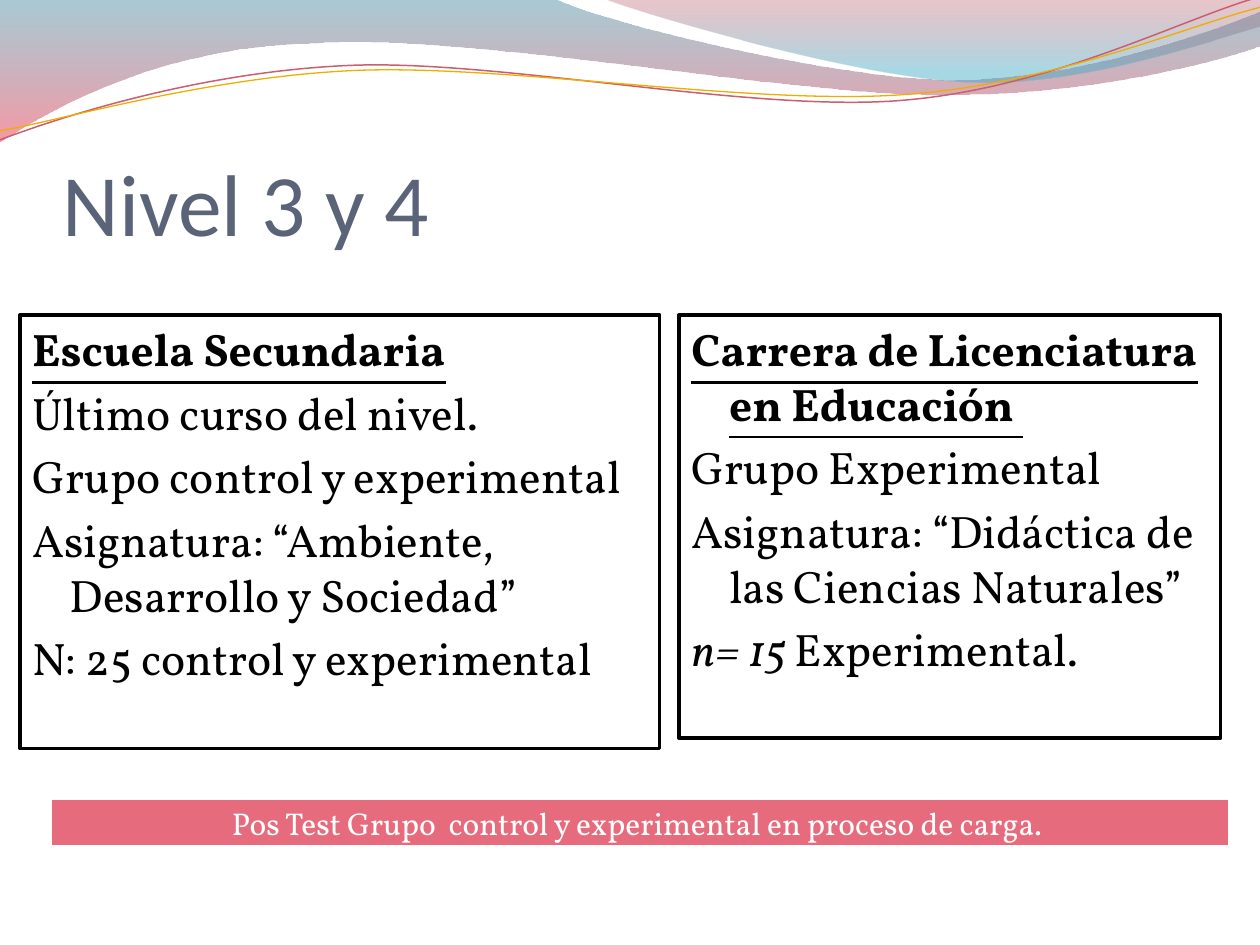
from math import cos, radians, sin

from lxml.etree import SubElement
from pptx import Presentation
from pptx.dml.color import RGBColor
from pptx.enum.shapes import MSO_SHAPE
from pptx.enum.text import MSO_ANCHOR, MSO_AUTO_SIZE, PP_ALIGN
from pptx.oxml.ns import qn
from pptx.util import Cm, Pt

COLORS = {
    "white": "FFFFFF", "black": "000000", "title": "5A6378", "banner": "E66C7D",
    "teal": "3F8A9F", "pink": "EF445B", "brick": "B84253", "cyan": "42ABC7",
    "rose": "CB5F6E", "gold": "F0AD00",
}
BODY_FONT = "Vollkorn"
LINE_TILT = 2.7  # degrees, counter-clockwise

# Outlines in centimetres: a pair is a straight step, six numbers a Bézier curve
LEFT_WAVE = [
    (0, 0), (11.18, -0.03), (12.09, 0.43, 16.87, 1.6, 19.25, 1.6),
    (21.67, 1.6, 24.33, 0.66, 25.4, 0.23), (25.43, 0.91),
    (24.97, 1.12, 22.1, 1.93, 18.95, 1.91), (15.8, 1.91, 9.7, 0.71, 6.53, 0.86),
    (3.28, 0.91, 1.17, 2.11, -0.03, 2.87), (0, 0),
]
RIGHT_WAVE = [
    (12.17, -0.03), (12.93, 0.28, 17.32, 1.57, 19.53, 1.65),
    (21.74, 1.75, 24.41, 0.81, 25.4, 0.53), (25.4, 0), (12.17, -0.03),
]
ROSE_LINE = [
    (0, 2.82), (1.22, 2.36, 4.01, 1.45, 7.04, 1.32),
    (10.03, 1.19, 15.06, 2.26, 18.11, 2.03), (21.16, 1.8, 23.83, 0.38, 25.35, -0.05),
]
GOLD_LINE = [
    (0, 2.64), (1.19, 2.44, 4.17, 1.55, 7.19, 1.42),
    (10.24, 1.3, 15.16, 2.13, 18.21, 1.91), (21.23, 1.7, 23.9, 0.53, 25.4, 0.15),
]

SCHOOL = [
    "Último curso del nivel.",
    "Grupo control y experimental",
    "Asignatura: “Ambiente, Desarrollo y Sociedad”",
    "N: 25 control y experimental",
]
DEGREE = ["Grupo Experimental", "Asignatura: “Didáctica de las Ciencias Naturales”"]


def color(name):
    return RGBColor.from_string(COLORS[name])


def turn(point, center, degrees):
    """Turn a point clockwise around a center."""
    angle = radians(degrees)
    x, y = point[0] - center[0], point[1] - center[1]
    return (center[0] + x * cos(angle) - y * sin(angle),
            center[1] + x * sin(angle) + y * cos(angle))


def add_outline(shapes, outline, close=False, tilt=0):
    """Add a freeform, with each group of three curve points made one Bézier."""
    points = [part[i:i + 2] for part in outline for i in range(0, len(part), 2)]
    center = [(min(axis) + max(axis)) / 2 for axis in zip(*points)]
    points = [turn(point, center, tilt) for point in points]
    points = [(Cm(x), Cm(y)) for x, y in points]
    builder = shapes.build_freeform(*points[0])
    builder.add_line_segments(points[1:], close=close)
    shape = builder.convert_to_shape()
    steps = shape.element.iter(qn("a:lnTo"))
    steps = iter(list(steps))
    for part in outline[1:]:
        first = next(steps)
        if len(part) == 6:
            first.tag = qn("a:cubicBezTo")
            for _ in range(2):
                extra = next(steps)
                first.append(extra[0])
                extra.getparent().remove(extra)
    shape.rotation = -tilt
    shape.shadow.inherit = False
    return shape


def add_wave(slide, outline, stops):
    """Add a wave with a downward gradient of (position, colour, opacity) stops."""
    shape = add_outline(slide.shapes, outline, close=True)
    shape.line.fill.background()
    shape.fill.gradient()
    gradient = shape.element.spPr.find(qn("a:gradFill"))
    for child in list(gradient):
        gradient.remove(child)
    stop_list = SubElement(gradient, qn("a:gsLst"))
    for position, name, opacity in stops:
        stop = SubElement(stop_list, qn("a:gs"), pos=str(position * 1000))
        tint = SubElement(stop, qn("a:srgbClr"), val=COLORS[name])
        SubElement(tint, qn("a:alpha"), val=str(opacity * 1000))
    SubElement(gradient, qn("a:lin"), ang="5400000", scaled="0")


def add_wave_line(group, outline, name, width):
    shape = add_outline(group.shapes, outline, tilt=LINE_TILT)
    shape.fill.background()
    shape.line.color.rgb = color(name)
    shape.line.width = Pt(width)


def add_box(slide, left, top, width, height, fill, line, line_width):
    shape = slide.shapes.add_shape(
        MSO_SHAPE.RECTANGLE, Cm(left), Cm(top), Cm(width), Cm(height))
    shape.shadow.inherit = False
    shape.fill.solid()
    shape.fill.fore_color.rgb = color(fill)
    shape.line.color.rgb = color(line)
    shape.line.width = Pt(line_width)
    shape.text_frame.word_wrap = True
    return shape


def set_font(paragraph, name, size, color_name):
    paragraph.font.name = name
    paragraph.font.size = Pt(size)
    paragraph.font.color.rgb = color(color_name)


def add_item(frame, text=""):
    """Add a paragraph with a hanging indent."""
    paragraph = frame.add_paragraph() if frame.text else frame.paragraphs[0]
    paragraph.text = text
    paragraph.alignment = PP_ALIGN.LEFT
    paragraph.space_before = Pt(5.2)
    properties = paragraph._p.get_or_add_pPr()
    properties.set("marL", str(Cm(0.76)))
    properties.set("indent", str(-Cm(0.76)))
    set_font(paragraph, BODY_FONT, 26, "black")
    return paragraph


def add_panel(slide, left, width, height, heading, items):
    shape = add_box(slide, left, 6.35, width, height, "white", "black", 2)
    frame = shape.text_frame
    frame.vertical_anchor = MSO_ANCHOR.TOP
    first = add_item(frame, heading)
    first.font.bold = True
    first.font.underline = True
    for item in items:
        add_item(frame, item)
    return frame


def add_title(slide, text):
    box = slide.shapes.add_textbox(Cm(1.27), Cm(1.95), Cm(22.86), Cm(3.18))
    frame = box.text_frame
    frame.word_wrap = True
    frame.vertical_anchor = MSO_ANCHOR.BOTTOM
    frame.margin_left = frame.margin_right = frame.margin_bottom = 0
    frame.text = text
    set_font(frame.paragraphs[0], "Calibri", 50, "title")


def add_banner(slide, text):
    shape = add_box(slide, 0.99, 16.07, 23.83, 1.02, "banner", "white", 3)
    shape.text_frame.auto_size = MSO_AUTO_SIZE.SHAPE_TO_FIT_TEXT
    paragraph = shape.text_frame.paragraphs[0]
    paragraph.text = text
    paragraph.alignment = PP_ALIGN.CENTER
    set_font(paragraph, BODY_FONT, 18, "white")


def main():
    presentation = Presentation()
    presentation.slide_width, presentation.slide_height = Cm(25.4), Cm(19.05)
    slide = presentation.slides.add_slide(presentation.slide_layouts[6])

    # Wave decoration
    add_wave(slide, LEFT_WAVE, [(0, "teal", 45), (100, "pink", 55)])
    add_wave(slide, RIGHT_WAVE, [(0, "brick", 30), (80, "cyan", 45)])
    wave_lines = slide.shapes.add_group_shape()
    add_wave_line(wave_lines, ROSE_LINE, "rose", 0.85)
    add_wave_line(wave_lines, GOLD_LINE, "gold", 0.75)

    # Title, first level, status banner
    add_title(slide, "Nivel 3 y 4")
    add_panel(slide, 0.4, 12.9, 8.74, "Escuela Secundaria", SCHOOL)
    add_banner(slide, "Pos Test Grupo  control y experimental en proceso de carga. ")

    # Second level, with its sample size in italics
    degree = add_panel(slide, 13.69, 10.92, 8.53,
                       "Carrera de Licenciatura en Educación ", DEGREE)
    sample = add_item(degree)
    sample_size = sample.add_run()
    sample_size.text = "n= 15 "
    sample_size.font.italic = True
    sample.add_run().text = "Experimental."

    presentation.save("out.pptx")


if __name__ == "__main__":
    main()
